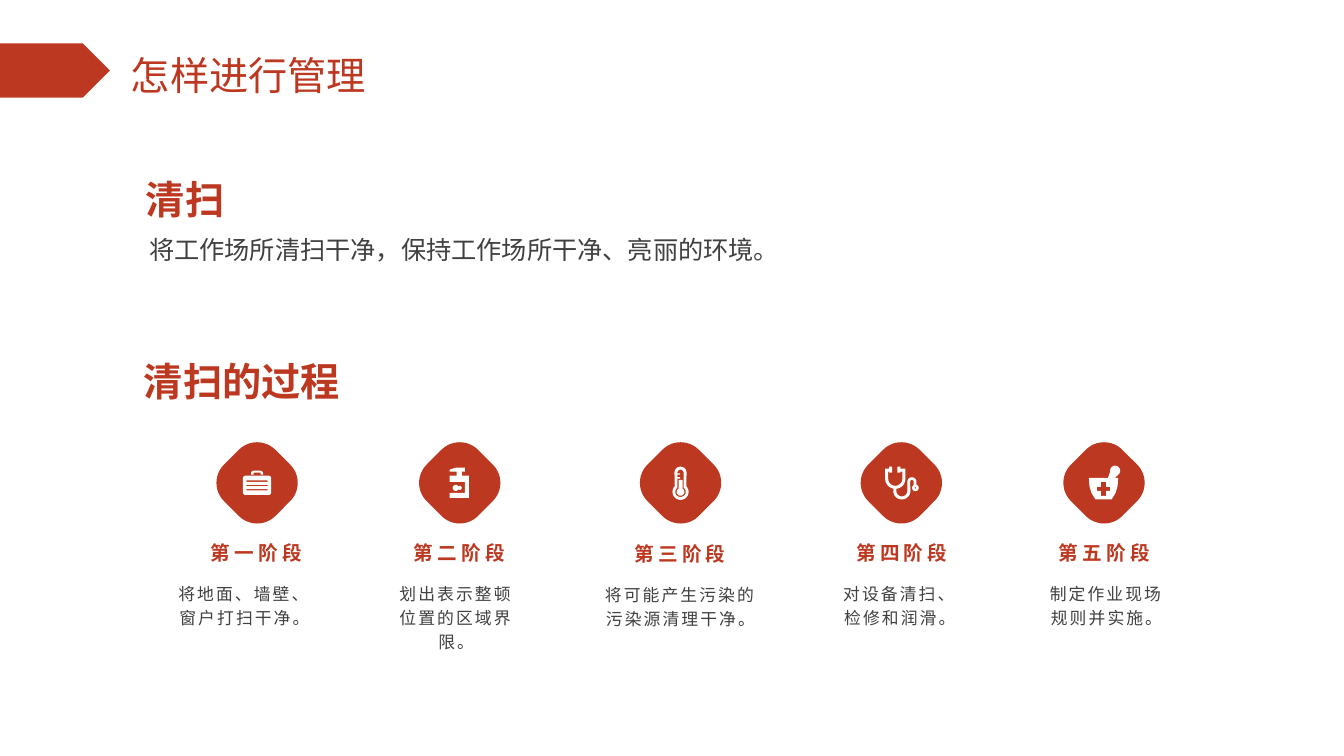
from math import cos, radians, sin

from lxml.etree import SubElement
from pptx import Presentation
from pptx.dml.color import RGBColor
from pptx.enum.shapes import MSO_SHAPE
from pptx.enum.text import MSO_ANCHOR, PP_ALIGN
from pptx.oxml.ns import qn
from pptx.util import Inches, Pt

RED, GRAY, WHITE = "BD3820", "404040", "FFFFFF"
MID_Y = 4.79


def color(code):
    return RGBColor.from_string(code)


def arc(x, y, radius, start, end):
    steps = 20
    turns = [radians(start + (end - start) * i / steps) for i in range(steps + 1)]
    return [(x + radius * cos(turn), y + radius * sin(turn)) for turn in turns]


def box(left, top, right, bottom):
    return [(left, top), (right, top), (right, bottom), (left, bottom)]


def case():
    body = (arc(-115, -45, 25, 180, 270) + arc(115, -45, 25, 270, 360)
            + arc(115, 95, 25, 0, 90) + arc(-115, 95, 25, 90, 180))
    grip = (arc(-30, -90, 30, 180, 270) + arc(30, -90, 30, 270, 360)
            + [(60, -80), (35, -80), (35, -100), (-35, -100), (-35, -80), (-60, -80)])
    return [body, grip] + [box(-105, y, 105, y + 13) for y in (-23, 20, 63)]


def bottle():
    body = [(-40, -150), (50, -150), (50, -110), (20, -110), (20, -70), (90, -70),
            (90, 150), (-100, 150), (-100, 100), (50, 100), (50, -10), (-100, -10),
            (-100, -70), (-30, -70), (-30, -110), (-100, -110), (-100, -130)]
    drop = arc(-40, 50, 30, 45, 315) + arc(0, 50, 20, 225, 495)
    return [body, drop]


def gauge():
    shell = arc(0, -100, 60, 180, 360) + arc(0, 90, 80, -45, 225)
    hollow = (arc(0, -100, 30, 180, 360) + arc(0, 90, 52, -55, 235)
              + [(-30, -40), (-5, -40), (-5, -55), (-30, -55),
                 (-30, -80), (-5, -80), (-5, -92), (-30, -92)])
    core = [(-20, -30), (20, -30)] + arc(0, 90, 38, -58, 238)
    return [shell, hollow, core]


def scope():
    fork = ([(-120, -140), (-160, -140)] + arc(-60, -40, 100, 180, 0)
            + [(40, -140), (-10, -140), (-10, -110), (10, -110)]
            + arc(-60, -40, 70, 0, 180) + [(-130, -110), (-120, -110)])
    tube = ([(-80, 58)] + arc(5, 80, 85, 180, 0) + arc(105, -10, 18, 180, 360)
            + [(123, 20), (150, 20)] + arc(105, -10, 45, 360, 180)
            + arc(5, 80, 55, 0, 180) + [(-50, 58)])
    tips = [box(x, -160, x + 30, -100) for x in (-120, -40)]
    return [fork, tube, arc(140, 50, 33, 0, 360), arc(140, 50, 8, 0, 360)] + tips


def mortar():
    bowl = [(-150, -50), (140, -50), (135, 30), (115, 100),
            (75, 165), (-85, 165), (-125, 100), (-145, 30)]
    stick = [(40, -52)] + arc(110, -120, 50, 170, 400) + [(110, -52)]
    cross = [(-30, -10), (20, -10), (20, 40), (60, 40), (60, 80), (20, 80),
             (20, 130), (-30, 130), (-30, 80), (-70, 80), (-70, 40), (-30, 40)]
    return [bowl, stick, cross]


class Deck:
    font = "Noto Sans CJK SC"

    def __init__(self):
        self.file = Presentation()
        self.file.slide_width = Inches(13.33)
        self.file.slide_height = Inches(7.5)
        self.slide = self.file.slides.add_slide(self.file.slide_layouts[6])
        self.shapes = self.slide.shapes

    def paint(self, shape, fill):
        shape.shadow.inherit = False
        shape.fill.solid()
        shape.fill.fore_color.rgb = color(fill)
        shape.line.fill.background()
        return shape

    def block(self, kind, left, top, width, height):
        shape = self.shapes.add_shape(
            kind, Inches(left), Inches(top), Inches(width), Inches(height))
        return self.paint(shape, RED)

    def text(self, words, left, top, width, height, size, tint,
             bold=False, align=PP_ALIGN.LEFT, middle=False, line=None, space=0):
        frame = self.shapes.add_textbox(
            Inches(left), Inches(top), Inches(width), Inches(height)).text_frame
        frame.word_wrap = True
        frame.vertical_anchor = MSO_ANCHOR.MIDDLE if middle else MSO_ANCHOR.TOP
        frame.text = words
        para = frame.paragraphs[0]
        para.alignment = align
        para.line_spacing = line
        run = para.runs[0]
        run.font.name = self.font
        run.font.size = Pt(size)
        run.font.bold = bold
        run.font.color.rgb = color(tint)
        props = run._r.get_or_add_rPr()
        SubElement(props, qn("a:ea")).set("typeface", self.font)
        if space:
            props.set("spc", str(int(space * 100)))

    def icon(self, paths, x, y):
        pen = self.shapes.build_freeform(*paths[0][0], scale=Inches(1) / 1000)
        for index, points in enumerate(paths):
            if index:
                pen.move_to(*points[0])
            pen.add_line_segments(points[1:], close=True)
        self.paint(pen.convert_to_shape(Inches(x), Inches(y)), WHITE)

    def stage(self, x, draw, name, left, note, start, width, drop):
        self.shapes = self.slide.shapes.add_group_shape().shapes
        tile = self.block(MSO_SHAPE.ROUNDED_RECTANGLE, x - 0.36, MID_Y - 0.36, 0.72, 0.72)
        tile.adjustments[0] = 0.355
        tile.rotation = 315
        self.icon(draw(), x, MID_Y)
        self.text(name, left, 5.29 + drop, 1.43, 0.34, 14, RED, bold=True,
                  align=PP_ALIGN.CENTER, middle=True, line=1.2, space=3)
        self.text(note, start, 5.7 + drop, width, 0.86, 12, GRAY,
                  align=PP_ALIGN.CENTER, line=1.2, space=1.5)
        self.shapes = self.slide.shapes


STAGES = [
    (2.55, case, "第一阶段", 1.83, "将地面、墙壁、窗户打扫干净。", 1.58, 1.69, 0),
    (4.56, bottle, "第二阶段", 3.84, "划出表示整顿位置的区域界限。", 3.84, 1.37, 0),
    (6.75, gauge, "第三阶段", 6.03, "将可能产生污染的污染源清理干净。", 5.85, 1.8, 0.01),
    (8.94, scope, "第四阶段", 8.23, "对设备清扫、检修和润滑。", 8.25, 1.35, 0),
    (10.95, mortar, "第五阶段", 10.24, "制定作业现场规则并实施。", 10.24, 1.47, 0),
]


def main():
    deck = Deck()
    deck.block(MSO_SHAPE.PENTAGON, 0, 0.43, 1.09, 0.54)
    deck.text("怎样进行管理", 1.2, 0.46, 3.07, 0.57, 28, RED, align=PP_ALIGN.JUSTIFY)
    deck.text("清扫", 1.35, 1.77, 6.67, 0.4, 28, RED, bold=True, middle=True)
    deck.text("将工作场所清扫干净，保持工作场所干净、亮丽的环境。",
              1.38, 2.28, 6.67, 0.4, 18, GRAY)
    deck.text("清扫的过程", 1.33, 3.57, 2.4, 0.41, 28, RED, bold=True, middle=True)
    for stage in STAGES:
        deck.stage(*stage)
    deck.file.save("out.pptx")


if __name__ == "__main__":
    main()
